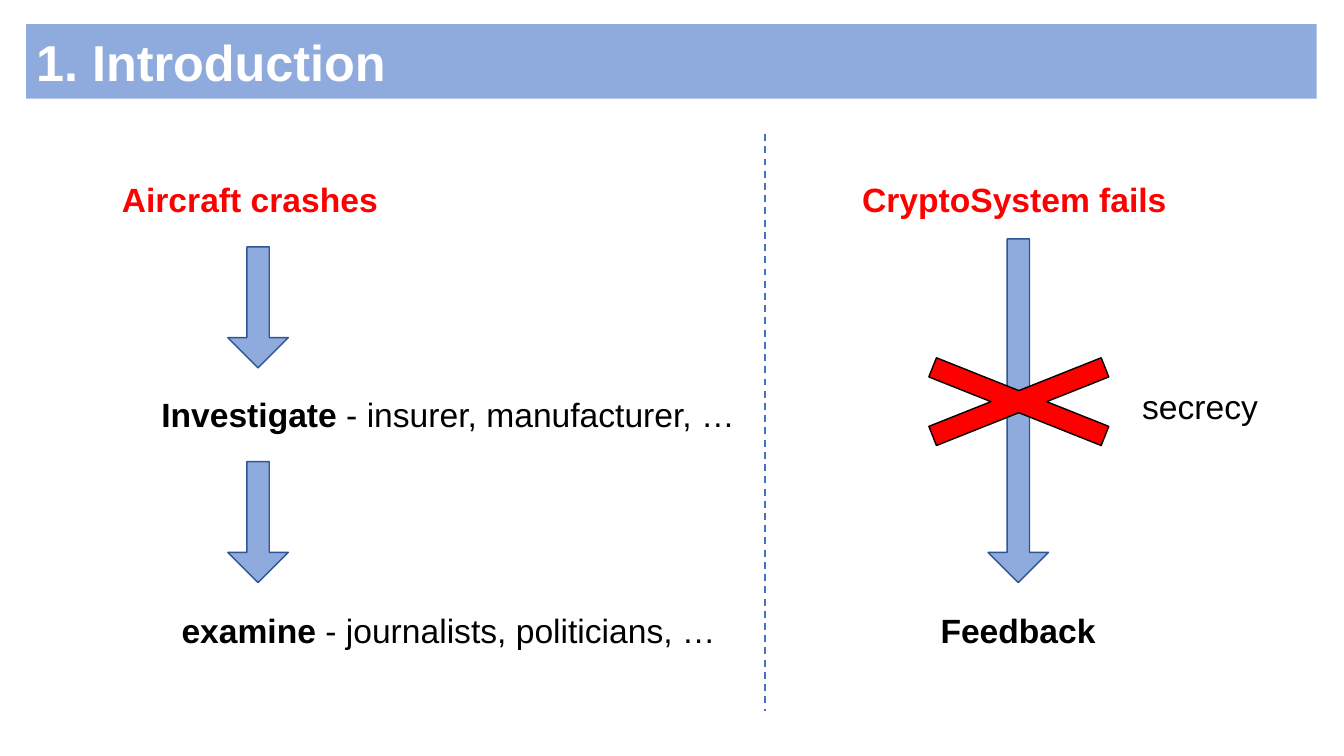
import pptx
import pptx.dml.color
import pptx.enum.dml
import pptx.enum.shapes
import pptx.enum.text
import pptx.oxml
import pptx.oxml.ns
import pptx.util

Inches = pptx.util.Inches
Pt = pptx.util.Pt
RGBColor = pptx.dml.color.RGBColor
Shape = pptx.enum.shapes.MSO_SHAPE
Anchor = pptx.enum.text.MSO_ANCHOR

WHITE = RGBColor(0xFF, 0xFF, 0xFF)
BLACK = RGBColor(0x00, 0x00, 0x00)
RED = RGBColor(0xFF, 0x00, 0x00)
BLUE = RGBColor(0x8F, 0xAA, 0xDC)
NAVY = RGBColor(0x2F, 0x55, 0x97)
DASH = RGBColor(0x44, 0x72, 0xC4)

LINE_H = 0.5


def write(frame, runs, size, color):
    """Fill the first paragraph with (text, bold) runs."""
    para = frame.paragraphs[0]
    para.alignment = pptx.enum.text.PP_ALIGN.LEFT
    for text, bold in runs:
        run = para.add_run()
        run.text = text
        run.font.name = "Arial"
        run.font.size = Pt(size)
        run.font.bold = bold
        run.font.color.rgb = color


def label(slide, left, top, width, runs, color=BLACK, wrap=True):
    box = slide.shapes.add_textbox(
        Inches(left), Inches(top), Inches(width), Inches(LINE_H))
    box.text_frame.word_wrap = wrap
    box.text_frame.auto_size = pptx.enum.text.MSO_AUTO_SIZE.SHAPE_TO_FIT_TEXT
    write(box.text_frame, runs, 24, color)


def solid(slide, kind, box, fill, edge=None):
    shape = slide.shapes.add_shape(kind, *map(Inches, box))
    shape.shadow.inherit = False
    shape.fill.solid()
    shape.fill.fore_color.rgb = fill
    if edge is None:
        shape.line.fill.background()
    else:
        shape.line.color.rgb = edge
        shape.line.width = Pt(1)
    return shape


def arrow(slide, left, top, height):
    shape = solid(slide, Shape.DOWN_ARROW, (left, top, 0.6, height), BLUE, NAVY)
    shape.adjustments[0] = 0.371
    shape.adjustments[1] = 0.5


def header(slide, box):
    band = solid(slide, Shape.RECTANGLE, box, BLUE)
    band.text_frame.word_wrap = True
    band.text_frame.vertical_anchor = Anchor.MIDDLE
    write(band.text_frame, [("1. Introduction", True)], 36, WHITE)


def divider(slide, x, top, bottom):
    line = slide.shapes.add_connector(
        pptx.enum.shapes.MSO_CONNECTOR.STRAIGHT,
        Inches(x), Inches(top), Inches(x), Inches(bottom))
    line.line.color.rgb = DASH
    line.line.width = Pt(1.25)
    line.line.dash_style = pptx.enum.dml.MSO_LINE.DASH
    props = line.element.find(pptx.oxml.ns.qn("p:spPr"))
    props.append(pptx.oxml.parse_xml(
        "<a:effectLst %s/>" % pptx.oxml.ns.nsdecls("a")))


def crash(slide, left, top):
    """Left column: a crash leads to inquiries."""
    label(slide, left, top, 2.89, [("Aircraft crashes", True)], RED)
    label(slide, left + 0.3, top + 2.13, 6.27,
          [(" Investigate", True), (" - insurer, manufacturer, …", False)])
    label(slide, left + 0.5, top + 4.27, 6.07,
          [(" examine ", True), ("- journalists, politicians, …", False)])
    for drop in (0.72, 2.85):
        arrow(slide, left + 1.15, top + drop, 1.2)


def crypto(slide, left, top):
    """Right column: secrecy blocks the feedback."""
    label(slide, left, top, 3.49, [(" CryptoSystem fails", True)], RED)
    arrow(slide, left + 1.44, top + 0.64, 3.41)
    label(slide, left + 0.87, top + 4.27, 1.75, [("Feedback", True)])
    cross = solid(slide, Shape.MATH_MULTIPLY,
                  (left + 0.1, top + 1.6, 3.29, 1.31), RED, BLACK)
    cross.adjustments[0] = 0.156
    label(slide, left + 2.87, top + 2.05, 1.36, [("secrecy", False)], wrap=False)


def main():
    deck = pptx.Presentation()
    deck.slide_width = Inches(13.33)
    deck.slide_height = Inches(7.5)
    slide = deck.slides.add_slide(deck.slide_layouts[6])
    header(slide, (0.26, 0.24, 12.8, 0.74))
    crash(slide, 1.11, 1.73)
    divider(slide, 7.59, 1.33, 7.05)
    crypto(slide, 8.36, 1.73)
    deck.save("out.pptx")


if __name__ == "__main__":
    main()
